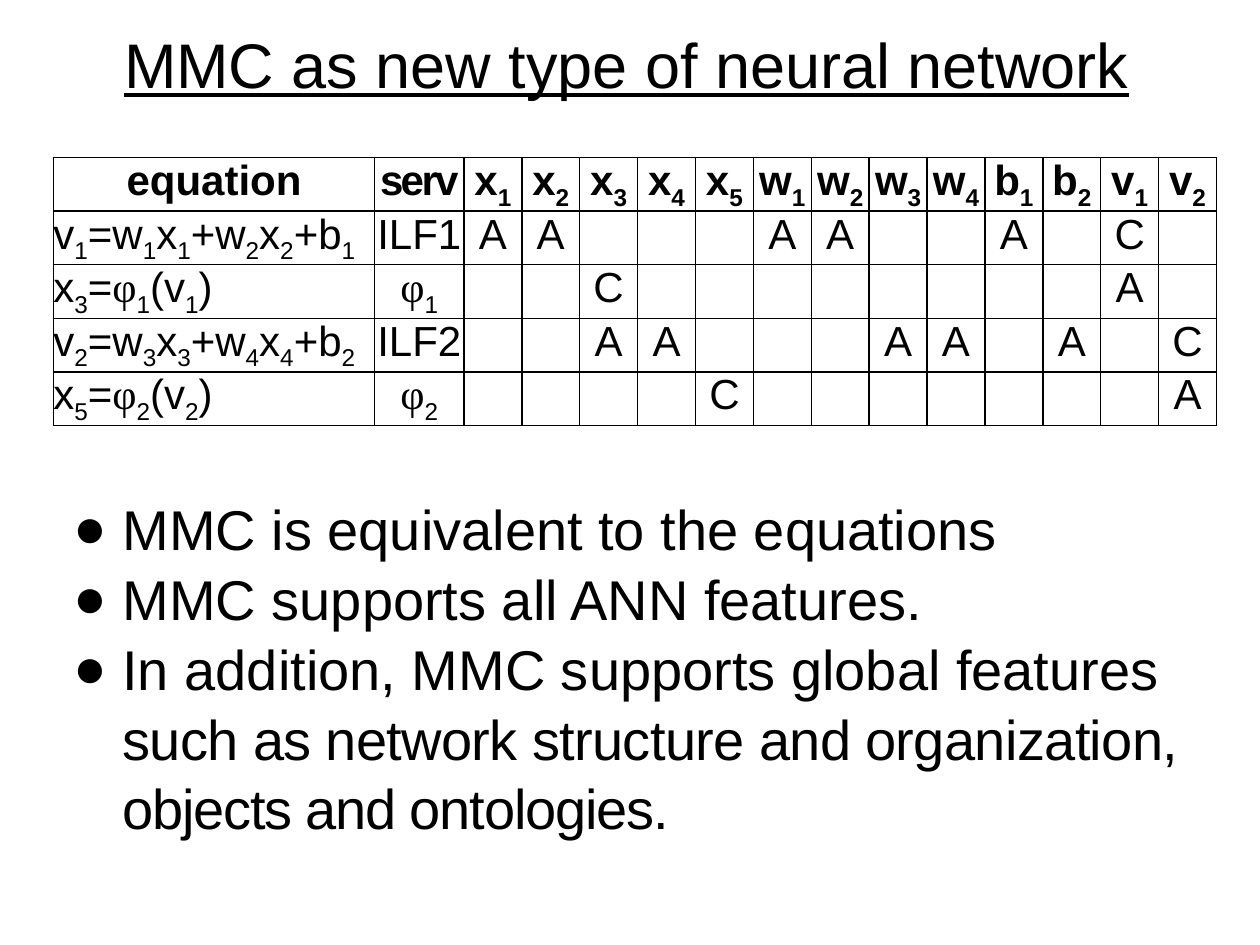
from dataclasses import dataclass
from itertools import groupby

from lxml.etree import SubElement
from pptx import Presentation
from pptx.dml.color import RGBColor
from pptx.enum.text import MSO_ANCHOR as Anchor, PP_ALIGN as Align
from pptx.oxml.ns import qn
from pptx.util import Pt


@dataclass(frozen=True)
class Theme:
    """Colours, fonts and type sizes of the slide."""
    ink: RGBColor = RGBColor(0, 0, 0)
    font: str = "Arial"
    greek_font: str = "Times New Roman"
    title_size: int = 36
    body_size: int = 32
    table_size: int = 24
    rule_width: int = 1


THEME = Theme()
SUBSCRIPTS = "₁₂₃₄₅"
TO_DIGITS = str.maketrans(SUBSCRIPTS, "12345")
TITLE = "MMC as new type of neural network"
VARIABLES = "x₁ x₂ x₃ x₄ x₅ w₁ w₂ w₃ w₄ b₁ b₂ v₁ v₂".split()
HEADER = ["equation", "serv", *VARIABLES]
EQUATIONS = [
    ("v₁=w₁x₁+w₂x₂+b₁", "ILF1", "x₁ x₂ w₁ w₂ b₁", "v₁"),
    ("x₃=φ₁(v₁)", "φ₁", "v₁", "x₃"),
    ("v₂=w₃x₃+w₄x₄+b₂", "ILF2", "x₃ x₄ w₃ w₄ b₂", "v₂"),
    ("x₅=φ₂(v₂)", "φ₂", "v₂", "x₅"),
]
POINTS = [
    [("MMC is equivalent to the equations", 0)],
    [("MMC supports all ANN features.", 0)],
    [("In addition, MMC supports global features ", 0),
     ("such as network structure and organization, ", -0.4),
     ("objects and ontologies.", -0.7)],
]


def style(paragraph, size, align=Align.LEFT, bold=False):
    """Set the font and alignment of a paragraph."""
    paragraph.alignment = align
    font = paragraph.font
    font.name, font.size, font.bold = THEME.font, Pt(size), bold
    font.color.rgb = THEME.ink


def add_run(paragraph, text, spacing=0):
    """Add a run with letter spacing in points."""
    run = paragraph.add_run()
    run.text = text
    if spacing:
        run.font._element.set("spc", str(round(spacing * 100)))
    return run


def write_formula(paragraph, formula, spacing=0):
    """Write a formula with lowered indices and Greek letters in their own font."""
    for (lowered, greek), letters in groupby(formula, lambda c: (c in SUBSCRIPTS, c == "φ")):
        run = add_run(paragraph, "".join(letters).translate(TO_DIGITS), spacing)
        if lowered:
            run.font._element.set("baseline", "-25000")
        if greek:
            run.font.name = THEME.greek_font


def draw_borders(cell):
    """Rule all four sides of a table cell."""
    properties = cell._tc.get_or_add_tcPr()
    for side in "LRTB":
        line = SubElement(properties, qn(f"a:ln{side}"), w=str(Pt(THEME.rule_width)))
        fill = SubElement(line, qn("a:solidFill"))
        SubElement(fill, qn("a:srgbClr"), val=str(THEME.ink))


def fill_cell(cell, text, align, bold):
    """Format one table cell and write its text."""
    cell.margin_left = cell.margin_right = cell.margin_top = cell.margin_bottom = 0
    draw_borders(cell)
    cell.fill.background()
    paragraph = cell.text_frame.paragraphs[0]
    style(paragraph, THEME.table_size, align, bold)
    write_formula(paragraph, text, -1.5 if text == "serv" else 0)


def equation_row(equation, service, arguments, computed):
    """Return a table row that marks arguments with A and the computed variable with C."""
    marks = dict.fromkeys(arguments.split(), "A") | {computed: "C"}
    return [equation, service, *(marks.get(name, "") for name in VARIABLES)]


def add_equation_table(slide, left, top, width, height):
    """Place the table of equations and the variables they use."""
    rows = [HEADER, *(equation_row(*entry) for entry in EQUATIONS)]
    frame = slide.shapes.add_table(len(rows), len(HEADER), Pt(left), Pt(top), Pt(width), Pt(height))
    table = frame.table
    equation_width, service_width = 183.6, 51
    variable_width = (width - equation_width - service_width) / len(VARIABLES)
    widths = [equation_width, service_width] + [variable_width] * len(VARIABLES)
    for column, column_width in zip(table.columns, widths):
        column.width = Pt(column_width)
    for r, row in enumerate(rows):
        for c, text in enumerate(row):
            align = Align.LEFT if r and not c else Align.CENTER
            fill_cell(table.cell(r, c), text, align, bold=r == 0)


def add_title(slide, left, top, width, height):
    """Place the underlined slide title."""
    frame = slide.shapes.add_textbox(Pt(left), Pt(top), Pt(width), Pt(height)).text_frame
    frame.word_wrap = True
    frame.vertical_anchor = Anchor.MIDDLE
    heading = frame.paragraphs[0]
    style(heading, THEME.title_size, Align.CENTER)
    heading.font.underline = True
    add_run(heading, TITLE)


def add_points(slide, left, top, width, height):
    """Place the bulleted conclusions."""
    frame = slide.shapes.add_textbox(Pt(left), Pt(top), Pt(width), Pt(height)).text_frame
    frame.word_wrap = True
    frame.margin_left = frame.margin_right = frame.margin_top = frame.margin_bottom = 0
    for index, point in enumerate(POINTS):
        paragraph = frame.add_paragraph() if index else frame.paragraphs[0]
        paragraph.line_spacing = 1.04
        properties = paragraph._p.get_or_add_pPr()
        properties.set("marL", str(Pt(28)))
        properties.set("indent", str(Pt(-28)))
        SubElement(properties, qn("a:buFont"), typeface=THEME.font)
        SubElement(properties, qn("a:buChar"), char="●")
        style(paragraph, THEME.body_size)
        for text, spacing in point:
            add_run(paragraph, text, spacing)


def main():
    """Build and save the slide."""
    deck = Presentation()
    deck.slide_width, deck.slide_height = Pt(720), Pt(540)
    slide = deck.slides.add_slide(deck.slide_layouts[6])
    add_equation_table(slide, 30.5, 90, 665, 147.5)
    add_title(slide, 28, 12, 660, 48)
    add_points(slide, 42, 281, 648, 194)
    deck.save("out.pptx")


if __name__ == "__main__":
    main()
